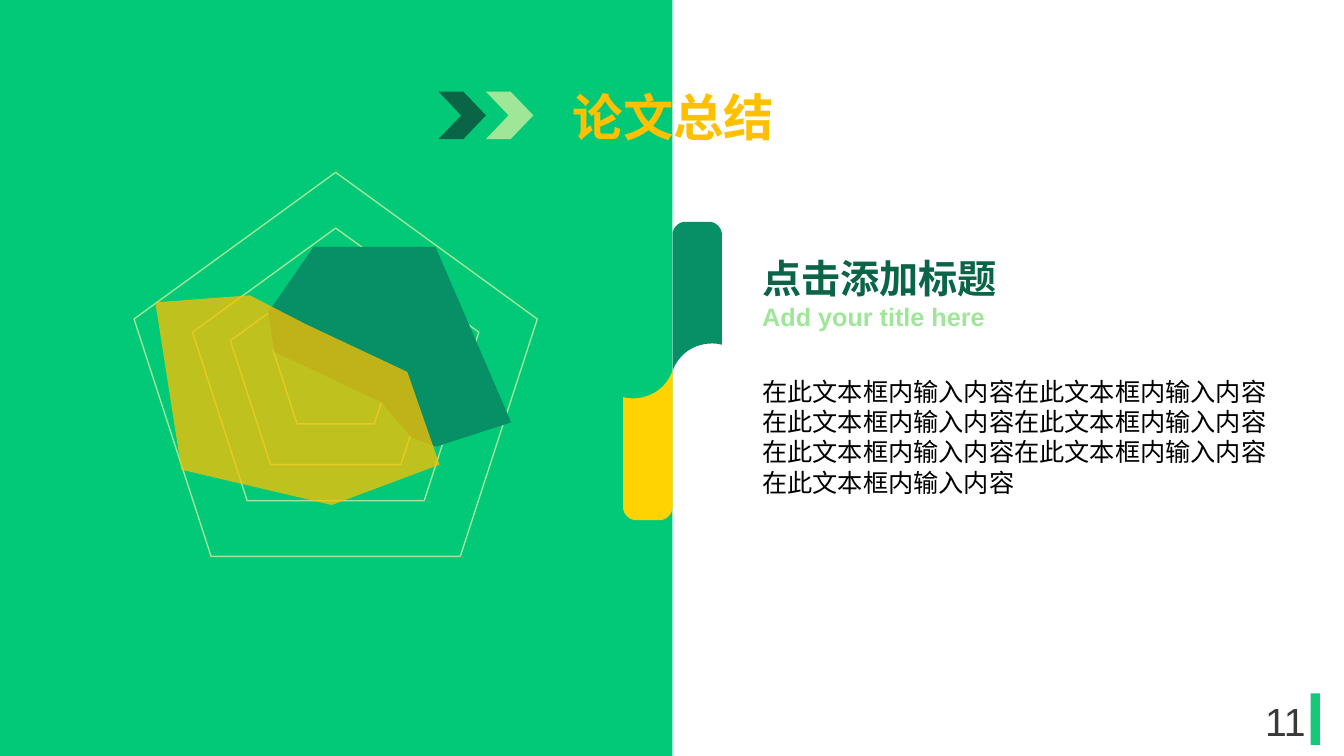
import pptx
import pptx.util
import pptx.dml.color
import pptx.enum.shapes
import pptx.enum.text
import pptx.oxml.ns
from lxml import etree

PX = 9144  # 100 px to the inch
GREEN, TEAL, DARK, PALE = "02C978", "079066", "0A6546", "9FE698"
GOLD, YELLOW, BLACK = "FFC000", "FFD302", "000000"
SHAPE = pptx.enum.shapes.MSO_SHAPE
ALIGN = pptx.enum.text.PP_ALIGN
ANCHOR = pptx.enum.text.MSO_ANCHOR


def px(length):
    return pptx.util.Emu(round(length * PX))


def color(hex_code):
    return pptx.dml.color.RGBColor.from_string(hex_code)


def sub(parent, tag, **attributes):
    return etree.SubElement(parent, pptx.oxml.ns.qn(tag), attributes)


def paint(shape, fill=None, line=None, alpha=None):
    shape.shadow.inherit = False
    if fill:
        shape.fill.solid()
        shape.fill.fore_color.rgb = color(fill)
    else:
        shape.fill.background()
    if line:
        shape.line.color.rgb = color(line)
        shape.line.width = pptx.util.Pt(1)
    else:
        shape.line.fill.background()
    if alpha:
        tint = shape._element.spPr.find(".//" + pptx.oxml.ns.qn("a:srgbClr"))
        sub(tint, "a:alpha", val=str(alpha * 1000))
    return shape


def add_preset(page, kind, box, **look):
    return paint(page.shapes.add_shape(kind, *map(px, box)), **look)


def add_outline(page, points, **look):
    corners = [(px(x), px(y)) for x, y in points]
    builder = page.shapes.build_freeform(*corners[0], scale=1.0)
    builder.add_line_segments(corners[1:], close=True)
    return paint(builder.convert_to_shape(), **look)


def curve(start, pull_a, pull_b, end, steps=16):
    """Points along a cubic curve."""
    for step in range(steps + 1):
        t = step / steps
        weights = ((1 - t) ** 3, 3 * t * (1 - t) ** 2, 3 * t * t * (1 - t), t ** 3)
        yield tuple(sum(w * p[axis] for w, p in zip(weights, (start, pull_a, pull_b, end)))
                    for axis in (0, 1))


def write_para(para, text, size, hex_code, bold=False, align=ALIGN.LEFT, gap=0):
    for name, value in {"alignment": align, "space_before": pptx.util.Pt(gap),
                        "space_after": pptx.util.Pt(0), "line_spacing": 1.0}.items():
        setattr(para, name, value)
    span = para.add_run()
    span.text = text
    for name, value in {"name": "Arial", "size": pptx.util.Pt(size), "bold": bold}.items():
        setattr(span.font, name, value)
    span.font.color.rgb = color(hex_code)


def place_text(shape, box, anchor=ANCHOR.TOP):
    for name, length in zip(("left", "top", "width", "height"), box):
        setattr(shape, name, px(length))
    frame = shape.text_frame
    for name, value in {"word_wrap": True, "vertical_anchor": anchor,
                        "auto_size": pptx.enum.text.MSO_AUTO_SIZE.NONE}.items():
        setattr(frame, name, value)
    return frame


def add_panel(page, box):
    panel = add_preset(page, SHAPE.RECTANGLE, box, fill=GREEN)
    # Behind the placeholders
    panel._element.getparent().insert(2, panel._element)


def add_heading(page, box):
    left, top, width, height = box
    side = 47
    for index, fill in enumerate((DARK, PALE)):
        chevron = add_preset(page, SHAPE.CHEVRON, (left + index * side, top + 11, side, side),
                             fill=fill)
        chevron.adjustments[0] = 0.478
    frame = place_text(page.shapes.title, (left - 3, top, width, height))
    write_para(frame.paragraphs[0], "论文总结", 36, GOLD, True, ALIGN.CENTER)


def add_radar(page, box):
    left, top, width, height = box
    # Concentric rings
    for ring in (124, 209, 284, 400):
        ring_height = ring * height / width
        add_preset(page, SHAPE.REGULAR_PENTAGON,
                   (left + (width - ring) / 2, top + (height - ring_height) / 2,
                    ring, ring_height), line=PALE)
    # Two series
    teal = [(139, 178), (133, 139), (178, 74), (299, 74), (374, 248),
            (300, 272), (275, 263), (245, 228)]
    gold = [(169, 150), (115, 122), (21, 129), (47, 295), (196, 330), (303, 290), (271, 198)]
    for points, look in ((teal, {"fill": TEAL}), (gold, {"fill": GOLD, "alpha": 75})):
        add_outline(page, [(left + x, top + y) for x, y in points], **look)


def add_tabs(page, box):
    left, top, width, height = box
    middle_x, middle_y = left + width / 2, top + height / 2
    # Lower tab, measured from the middle of the box
    tab = [(-36, 148),
           *curve((-13, 148), (-6, 148), (0, 142), (0, 135)),
           *curve((0, 0), (-7, 19), (-25, 29), (-44, 27)),
           (-49, 26),
           *curve((-49, 135), (-49, 142), (-43, 148), (-36, 148))]
    for turn, fill in ((1, YELLOW), (-1, TEAL)):
        add_outline(page, [(middle_x + turn * x, middle_y + turn * y) for x, y in tab], fill=fill)


def add_summary(page, box):
    frame = place_text(page.placeholders[1], box)
    phrase = "在此文本框内输入内容"
    lines = [("点击添加标题", 28, DARK, True, 0), ("Add your title here", 18, PALE, True, 0)]
    lines += [(phrase * count, 18, BLACK, False, 0 if index else 32)
              for index, count in enumerate((2, 2, 2, 1))]
    for index, (text, size, hex_code, bold, gap) in enumerate(lines):
        para = frame.add_paragraph() if index else frame.paragraphs[0]
        write_para(para, text, size, hex_code, bold, gap=gap)
        properties = para._p.get_or_add_pPr()
        properties.set("marL", "0")
        properties.set("indent", "0")
        sub(properties, "a:buNone")


def add_page_number(page, box):
    left, top, width, height = box
    add_preset(page, SHAPE.RECTANGLE, (left + width - 9, top, 9, height), fill="14C97A")
    number_box = (left, top + 7, 76, 40)
    frame = place_text(page.shapes.add_textbox(*map(px, number_box)), number_box, ANCHOR.MIDDLE)
    write_para(frame.paragraphs[0], "11", 28, "3B3838", align=ALIGN.CENTER)


def main():
    deck = pptx.Presentation()
    deck.slide_width, deck.slide_height = px(1333), px(750)
    page = deck.slides.add_slide(deck.slide_layouts[1])
    add_panel(page, (0, 0, 667, 750))
    add_page_number(page, (1237, 688, 72, 51))
    add_heading(page, (435, 80, 472, 71))
    add_tabs(page, (618, 220, 98, 296))
    add_radar(page, (133, 171, 400, 381))
    add_summary(page, (746, 247, 603, 286))
    deck.save("out.pptx")


if __name__ == "__main__":
    main()
